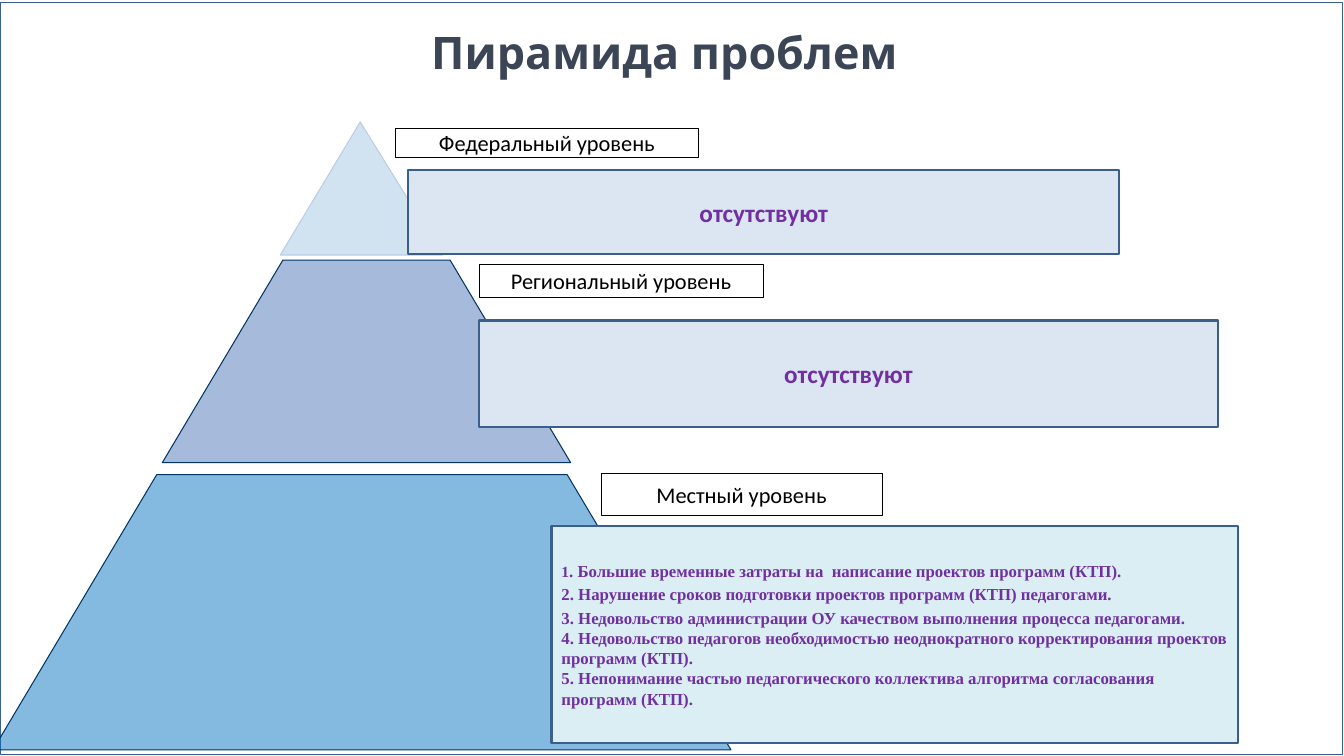
from dataclasses import dataclass

from lxml import etree
from pptx import Presentation
from pptx.dml.color import RGBColor
from pptx.enum import shapes, text
from pptx.oxml.ns import qn
from pptx.util import Inches, Pt


@dataclass(frozen=True)
class Theme:
    head: str = "League Spartan"
    body: str = "Calibri"
    serif: str = "Times New Roman"
    ink: str = "3B4555"
    black: str = "000000"
    white: str = "FFFFFF"
    edge: str = "3A5F8C"
    navy: str = "003366"
    pale: str = "B9CDE5"
    accent: str = "7030A0"
    panel: str = "DCE6F2"
    aqua: str = "DBEEF4"
    title: int = 32
    note: int = 18
    label: int = 16
    item: int = 12
    first: int = 11


T = Theme()
RECT = shapes.MSO_SHAPE.RECTANGLE
TRI = shapes.MSO_SHAPE.ISOSCELES_TRIANGLE
TRAP = shapes.MSO_SHAPE.TRAPEZOID

# kind, box, apex or slope, fill, alpha in percent, line
TIERS = [
    (TRI, (2.78, 1.21, 1.61, 1.32), 0.493, "327FBE", 22, T.pale),
    (TRAP, (1.61, 2.58, 4.05, 2.01), 0.595, "4770B5", 48, T.navy),
    (TRAP, (-0.07, 4.71, 7.32, 2.73), 0.595, "0070C0", 48, T.navy),
]

NONE = "отсутствуют"
ITEMS = [
    ". Большие временные затраты на  написание проектов программ (КТП).",
    ". Нарушение сроков подготовки проектов программ (КТП) педагогами.",
    ". Недовольство администрации ОУ качеством выполнения процесса педагогами.",
    ". Недовольство педагогов необходимостью неоднократного корректирования "
    "проектов программ (КТП).",
    ". Непонимание частью педагогического коллектива алгоритма согласования "
    "программ (КТП).",
]

# label, label box, panel box
LEVELS = [
    ("Федеральный уровень", (3.92, 1.27, 3.01, 0.29), (4.05, 1.69, 7.05, 0.83)),
    ("Региональный уровень", (4.75, 2.62, 2.82, 0.33), (4.75, 3.18, 7.33, 1.06)),
    ("Местный уровень", (5.96, 4.7, 2.79, 0.41), (5.47, 5.22, 6.81, 2.15)),
]


def color(code):
    return RGBColor.from_string(code)


def draw(slide, kind, box, fill, line, width):
    shape = slide.shapes.add_shape(kind, *map(Inches, box))
    shape.shadow.inherit = False
    if fill:
        shape.fill.solid()
        shape.fill.fore_color.rgb = color(fill)
    else:
        shape.fill.background()
    shape.line.color.rgb = color(line)
    shape.line.width = Pt(width)
    return shape


def write(para, words, face, size, ink, bold=False):
    run = para.add_run()
    run.text = words
    run.font.name = face
    run.font.size = Pt(size)
    run.font.bold = bold
    run.font.color.rgb = color(ink)


def middle(shape):
    """Wrap and centre the text vertically; return its first paragraph."""
    frame = shape.text_frame
    frame.word_wrap = True
    frame.vertical_anchor = text.MSO_ANCHOR.MIDDLE
    return frame.paragraphs[0]


def heading(slide, box):
    title = slide.shapes.title
    title.left, title.top, title.width, title.height = map(Inches, box)
    frame = title.text_frame
    frame.auto_size = text.MSO_AUTO_SIZE.NONE
    frame.margin_left = frame.margin_right = Inches(0.04)
    frame.margin_top = frame.margin_bottom = Inches(0.04)
    para = middle(title)
    para.alignment = text.PP_ALIGN.CENTER
    write(para, "Пирамида проблем", T.head, T.title, T.ink, True)


def tier(slide, kind, box, slope, fill, alpha, line):
    shape = draw(slide, kind, box, fill, line, 0.75)
    shape.adjustments[0] = slope
    tone = shape.fill._xPr.find(qn("a:solidFill"))[0]
    etree.SubElement(tone, qn("a:alpha"), val=str(alpha * 1000))


def label(slide, box, words):
    para = middle(draw(slide, RECT, box, T.white, T.black, 0.5))
    para.alignment = text.PP_ALIGN.CENTER
    write(para, words, T.body, T.label, T.black)


def panel(slide, box):
    para = middle(draw(slide, RECT, box, T.panel, T.edge, 1.5))
    para.alignment = text.PP_ALIGN.CENTER
    write(para, NONE, T.body, T.note, T.accent, True)


def issues(slide, box):
    """Numbered list of the local problems."""
    shape = draw(slide, RECT, box, T.aqua, T.edge, 1.5)
    para = middle(shape)
    for num, words in enumerate(ITEMS, 1):
        if num > 1:
            para = shape.text_frame.add_paragraph()
        para.alignment = text.PP_ALIGN.LEFT
        if num in (2, 3):
            para.line_spacing = Pt(16.8)
        size = T.first if num == 1 else T.item
        write(para, str(num), T.serif, size, T.accent, True)
        write(para, words, T.serif, T.item, T.accent, True)


def pyramid(deck):
    slide = deck.slides.add_slide(deck.slide_layouts[5])
    draw(slide, RECT, (0, 0.02, 13.31, 7.46), None, T.edge, 0.25)
    heading(slide, (0.71, 0.06, 11.76, 0.91))
    for spec_row in TIERS:
        tier(slide, *spec_row)
    for (name, tag, area), body in zip(LEVELS, (panel, panel, issues)):
        label(slide, tag, name)
        body(slide, area)


def main():
    deck = Presentation()
    deck.slide_width, deck.slide_height = Inches(13.33), Inches(7.5)
    pyramid(deck)
    deck.save("out.pptx")


if __name__ == "__main__":
    main()
